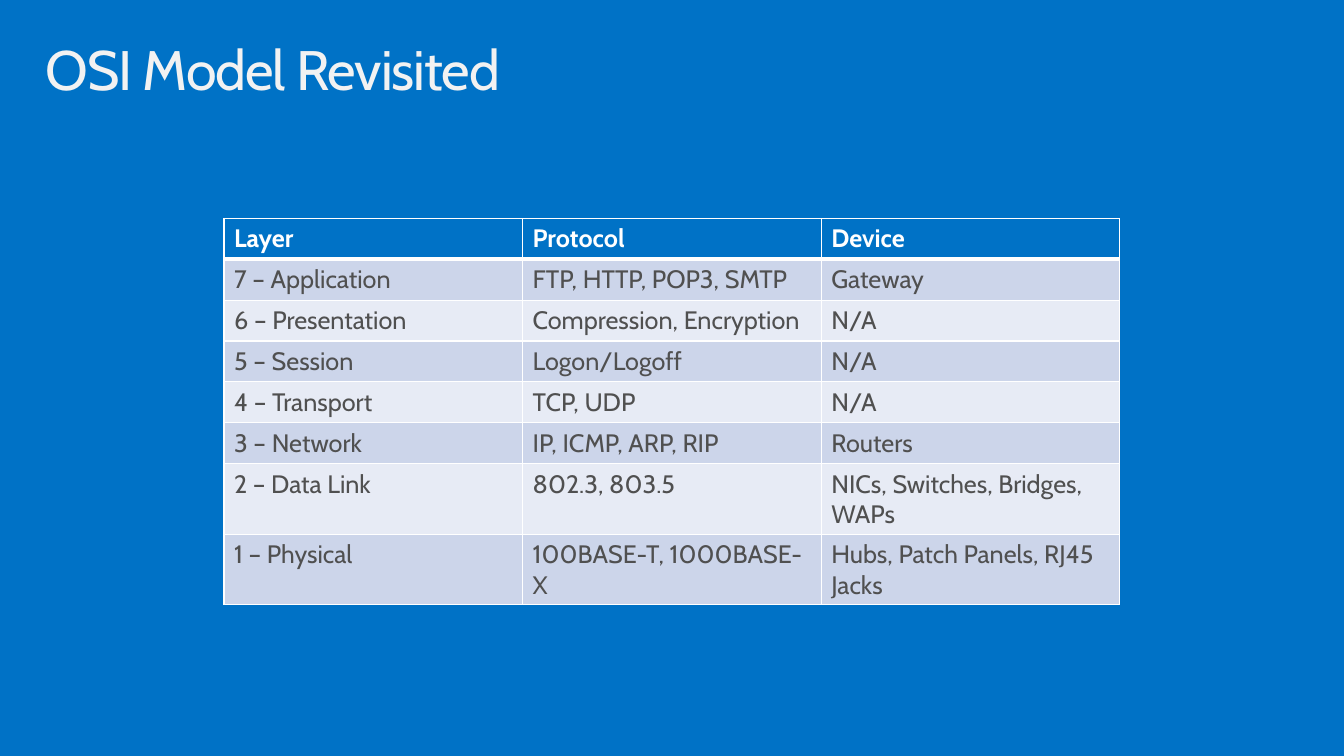
import lxml.etree
import pptx
import pptx.dml.color
import pptx.enum.text
import pptx.oxml.ns
import pptx.util

Pt = pptx.util.Pt
RGBColor = pptx.dml.color.RGBColor

BLUE = RGBColor(0x00, 0x72, 0xC6)
OFF_WHITE = RGBColor(0xF2, 0xF2, 0xF2)
WHITE = RGBColor(0xFF, 0xFF, 0xFF)
GREY = RGBColor(0x50, 0x50, 0x50)
DARK_BAND = RGBColor(0xCC, 0xD5, 0xEA)
LIGHT_BAND = RGBColor(0xE7, 0xEB, 0xF5)

FONT = "Cabin"
COLUMN_WIDTH = 213.33
ROW_HEIGHT = 29.2

LAYERS = [
    ("Layer", "Protocol", "Device"),
    ("7 – Application", "FTP, HTTP, POP3, SMTP", "Gateway"),
    ("6 – Presentation", "Compression, Encryption", "N/A"),
    ("5 – Session", "Logon/Logoff", "N/A"),
    ("4 – Transport", "TCP, UDP", "N/A"),
    ("3 – Network", "IP, ICMP, ARP, RIP", "Routers"),
    ("2 – Data Link", "802.3, 803.5", "NICs, Switches, Bridges, WAPs"),
    ("1 – Physical", "100BASE-T, 1000BASE-X", "Hubs, Patch Panels, RJ45 Jacks"),
]


def write_text(frame, text, size=18, color=GREY, bold=False, line_spacing=None, tracking=None):
    para = frame.paragraphs[0]
    if line_spacing:
        para.line_spacing = line_spacing
    span = para.add_run()
    span.text = text
    span.font.name = FONT
    span.font.size = Pt(size)
    span.font.bold = bold
    span.font.color.rgb = color
    if tracking:
        span.font._element.set("spc", str(round(tracking * 100)))


def add_title(page, text):
    box = page.shapes.add_textbox(Pt(21), Pt(23), Pt(918), Pt(70.6))
    frame = box.text_frame
    frame.word_wrap = True
    frame.vertical_anchor = pptx.enum.text.MSO_ANCHOR.TOP
    frame.margin_left = frame.margin_right = Pt(11.5)
    frame.margin_top = frame.margin_bottom = Pt(7.2)
    write_text(frame, text, size=39.7, color=OFF_WHITE, line_spacing=0.9, tracking=-0.8)


def set_borders(cell, **widths):
    qn = pptx.oxml.ns.qn
    properties = cell._tc.get_or_add_tcPr()
    for side in "LRTB":
        width = Pt(widths.get(side, 1))
        line = lxml.etree.SubElement(properties, qn(f"a:ln{side}"), w=str(int(width)))
        fill = lxml.etree.SubElement(line, qn("a:solidFill"))
        lxml.etree.SubElement(fill, qn("a:srgbClr"), val=str(WHITE))


def fill_cell(cell, text, row_index):
    if row_index == 0:
        set_borders(cell, B=3)
        background = BLUE
        write_text(cell.text_frame, text, color=WHITE, bold=True)
    else:
        set_borders(cell, T=3 if row_index == 1 else 1)
        background = DARK_BAND if row_index % 2 else LIGHT_BAND
        write_text(cell.text_frame, text)
    cell.fill.solid()
    cell.fill.fore_color.rgb = background


def add_layer_table(page, rows):
    columns = len(rows[0])
    table = page.shapes.add_table(
        len(rows), columns, Pt(160), Pt(156),
        Pt(COLUMN_WIDTH * columns), Pt(ROW_HEIGHT * len(rows)),
    ).table
    for column in table.columns:
        column.width = Pt(COLUMN_WIDTH)
    for row_index, texts in enumerate(rows):
        table.rows[row_index].height = Pt(ROW_HEIGHT)
        for column_index, text in enumerate(texts):
            fill_cell(table.cell(row_index, column_index), text, row_index)


def main():
    deck = pptx.Presentation()
    deck.slide_width = Pt(960)
    deck.slide_height = Pt(540)
    page = deck.slides.add_slide(deck.slide_layouts[6])
    page.background.fill.solid()
    page.background.fill.fore_color.rgb = BLUE
    add_title(page, "OSI Model Revisited")
    add_layer_table(page, LAYERS)
    deck.save("out.pptx")


if __name__ == "__main__":
    main()
